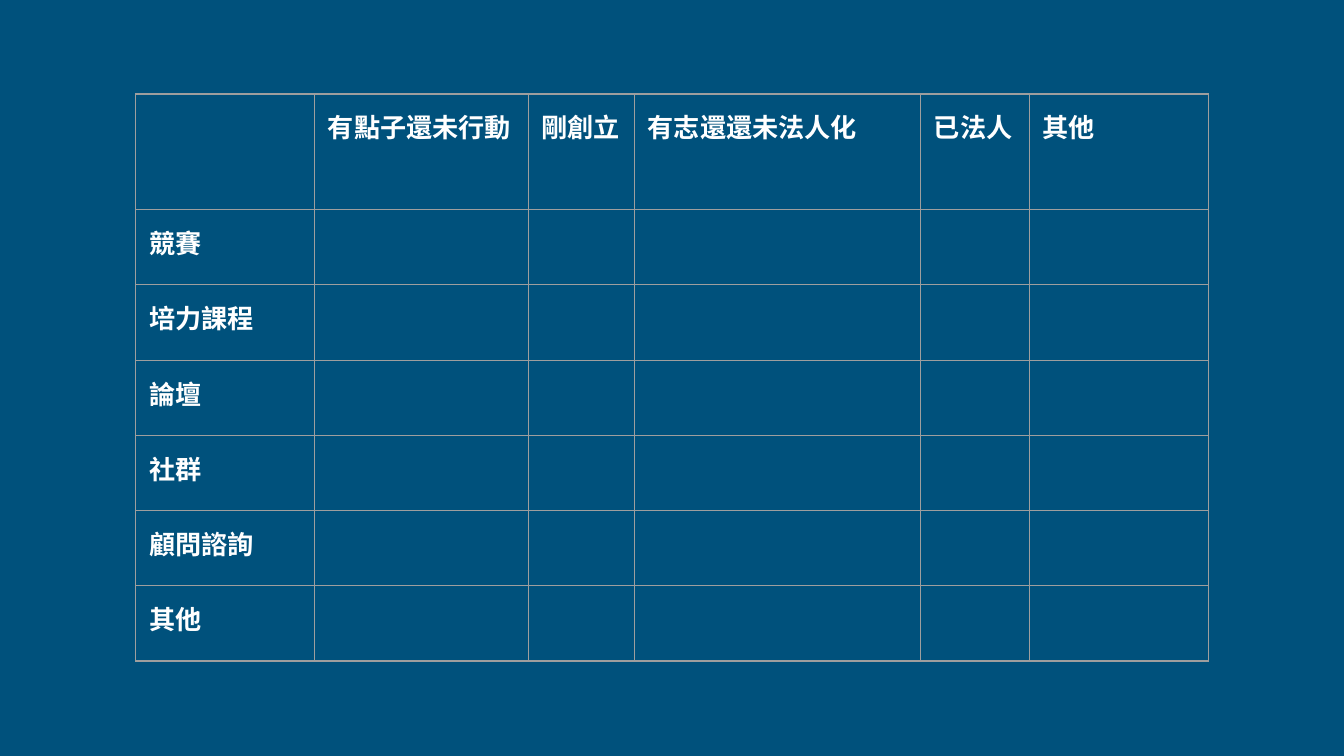
from lxml import etree
from pptx import Presentation
from pptx.dml.color import RGBColor
from pptx.oxml.ns import qn
from pptx.util import Inches, Pt

NAVY = RGBColor(0x00, 0x51, 0x7C)
WHITE = RGBColor(0xFF, 0xFF, 0xFF)
GRAY = RGBColor(0x9E, 0x9E, 0x9E)

STAGES = ["有點子還未行動", "剛創立", "有志還還未法人化", "已法人", "其他"]
SERVICES = ["競賽", "培力課程", "論壇", "社群", "顧問諮詢", "其他"]
COL_WIDTHS = [1.33, 1.59, 0.79, 2.13, 0.81, 1.33]
ROW_HEIGHTS = [0.86] + [0.56] * len(SERVICES)


class SlideBuilder:
    font = {"name": "Arial", "size": Pt(14), "bold": True}
    margins = dict.fromkeys(
        ("margin_left", "margin_top", "margin_right", "margin_bottom"), Inches(0.1))
    border_width = Pt(0.75)

    def __init__(self, prs):
        self.s = prs.slides.add_slide(prs.slide_layouts[6])

    def background(self, color):
        fill = self.s.background.fill
        fill.solid()
        fill.fore_color.rgb = color

    def table(self, left, top, widths, heights, rows):
        tbl = self.s.shapes.add_table(
            len(heights), len(widths), Inches(left), Inches(top),
            Inches(sum(widths)), Inches(sum(heights))).table
        tbl.first_row = tbl.horz_banding = False
        for col, width in zip(tbl.columns, widths):
            col.width = Inches(width)
        for row, height, texts in zip(tbl.rows, heights, rows):
            row.height = Inches(height)
            for cell, text in zip(row.cells, texts):
                self.cell(cell, text)

    def cell(self, cell, text):
        for key, value in self.margins.items():
            setattr(cell, key, value)
        cell.fill.background()
        self.borders(cell)
        if text:
            r = cell.text_frame.paragraphs[0].add_run()
            r.text = text
            for key, value in self.font.items():
                setattr(r.font, key, value)
            r.font.color.rgb = WHITE

    def borders(self, cell):
        """Line all four sides; the lines must come before the cell's fill."""
        tc_pr = cell._tc.get_or_add_tcPr()
        for i, side in enumerate(("a:lnL", "a:lnR", "a:lnT", "a:lnB")):
            ln = etree.Element(qn(side), w=str(self.border_width))
            fill = etree.SubElement(ln, qn("a:solidFill"))
            etree.SubElement(fill, qn("a:srgbClr"), val=str(GRAY))
            tc_pr.insert(i, ln)


def main():
    prs = Presentation()
    prs.slide_width = Inches(10)
    prs.slide_height = Inches(10 * 9 / 16)
    slide = SlideBuilder(prs)
    slide.background(NAVY)
    rows = [[""] + STAGES]
    rows += [[service] + [""] * len(STAGES) for service in SERVICES]
    slide.table(1.01, 0.7, COL_WIDTHS, ROW_HEIGHTS, rows)
    prs.save("out.pptx")


if __name__ == "__main__":
    main()
